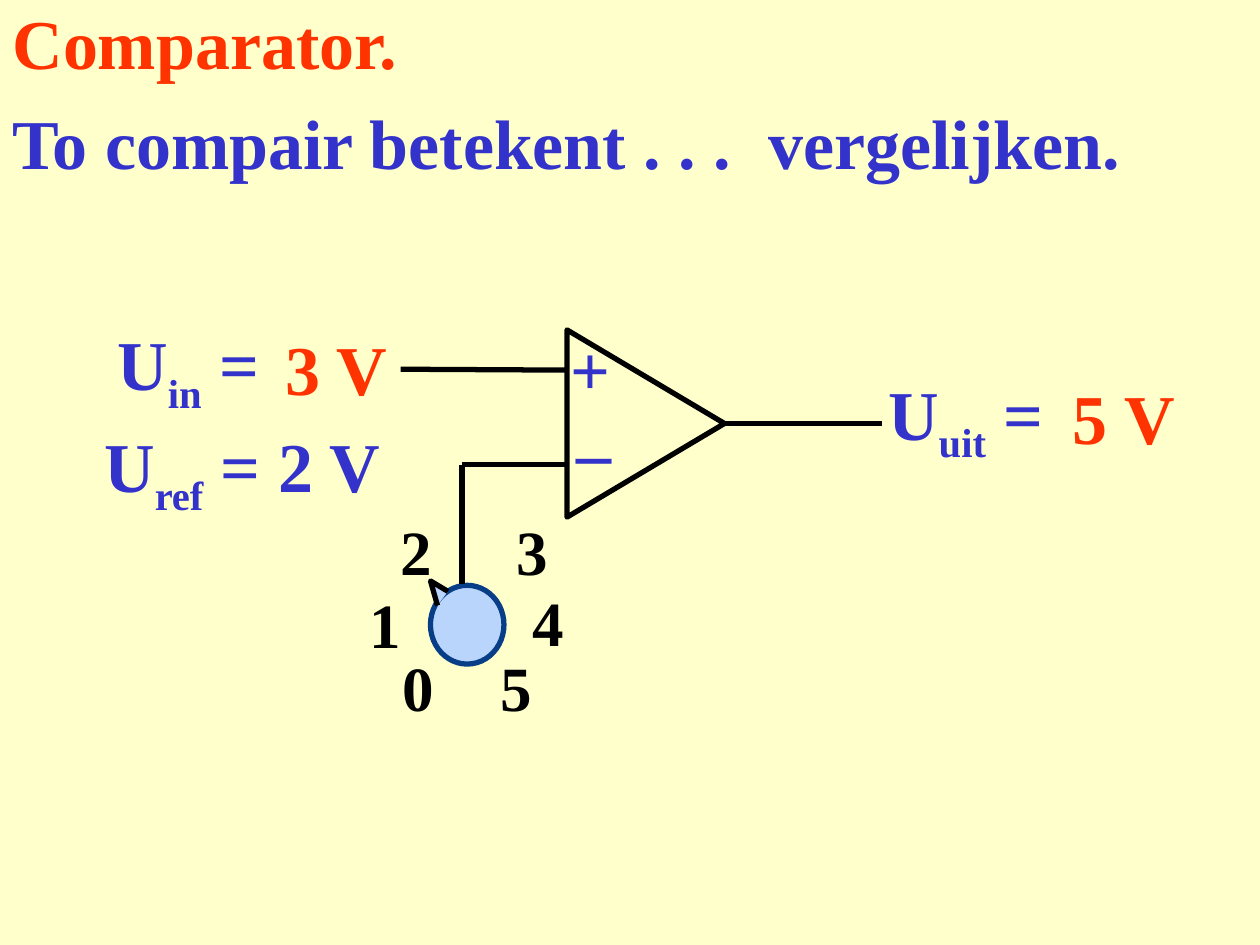
from lxml.etree import SubElement
from pptx import Presentation
from pptx.dml.color import RGBColor
from pptx.enum.shapes import MSO_CONNECTOR, MSO_SHAPE
from pptx.enum.text import MSO_ANCHOR, MSO_AUTO_SIZE, PP_ALIGN
from pptx.oxml.ns import qn
from pptx.util import Pt

BLUE, RED, BLACK = "3333CC", "FF3300", "000000"
KNOB_FILL, KNOB_LINE, PAPER = "B9D5FB", "073E87", "FFFFCC"
FONT = "Times New Roman"
LINE_WIDTH = 3

# Content: text parts (plain, subscript, plain), then left, top, width, height
TITLE = ("Comparator.", (0, 0, 450, 48))
LABELS = [
    (["To compair betekent . . ."], BLUE, (0, 54, 432, 54)),
    (["vergelijken."], BLUE, (432, 60, 252, 42)),
    (["U", "in", " ="], BLUE, (60, 183.5, 108, 54)),
    (["3 V"], RED, (156, 174, 114, 72)),
    (["U", "ref", " = 2 V"], BLUE, (52.5, 236, 192, 66)),
    (["U", "uit", " ="], BLUE, (500.5, 209, 114, 60)),
    (["5 V"], RED, (606, 202, 114, 72)),
    (["+"], BLUE, (319, 174, 36, 72)),
    (["_"], BLUE, (322.5, 207.5, 48, 72)),
]
# Knob scale: digit, left, top
DIGITS = [("0", 223, 367), ("1", 204, 331), ("2", 222, 289.5),
          ("3", 288, 289.5), ("4", 297.5, 330), ("5", 279, 367)]
DIGIT_WIDTH, DIGIT_HEIGHT = 30, 50
WIRES = [
    ((229, 211), (324, 211.5)),     # input
    ((324, 265.5), (264, 265.5)),   # reference
    ((264, 265.5), (264, 333.5)),   # reference to knob
    ((414, 242), (504, 242)),       # output
]
AMPLIFIER = (324, 188.5, 90, 107)   # as seen after rotation
KNOB = (246, 334.5, 42, 45)
POINTER = [(249.5, 345.5), (246, 331.5), (256.5, 338.5)]


def color(value):
    return RGBColor.from_string(value)


def points(values):
    return [Pt(value) for value in values]


def write(frame, parts, ink=BLUE, size=40, anchor=MSO_ANCHOR.MIDDLE, before=0):
    """Write one bold paragraph; every second part is a subscript."""
    frame.word_wrap = True
    frame.auto_size = MSO_AUTO_SIZE.NONE
    frame.vertical_anchor = anchor
    para = frame.paragraphs[0]
    para.alignment = PP_ALIGN.LEFT
    para.space_before = Pt(before)
    for index, part in enumerate(parts):
        span = para.add_run()
        span.text = part
        span.font.name, span.font.size, span.font.bold = FONT, Pt(size), True
        span.font.color.rgb = color(ink)
        if index % 2:
            span.font._element.set("baseline", "-25000")


def paint(shape, line, fill=None):
    shape.shadow.inherit = False
    shape.line.color.rgb, shape.line.width = color(line), Pt(LINE_WIDTH)
    if fill:
        shape.fill.solid()
        shape.fill.fore_color.rgb = color(fill)
    else:
        shape.fill.background()


def add_wire(page, start, end):
    wire = page.shapes.add_connector(
        MSO_CONNECTOR.STRAIGHT, *points(start + end))
    wire.line.color.rgb, wire.line.width = color(BLACK), Pt(LINE_WIDTH)
    SubElement(wire._element.spPr, qn("a:effectLst"))


def main():
    deck = Presentation()
    deck.slide_width, deck.slide_height = Pt(720), Pt(540)
    page = deck.slides.add_slide(deck.slide_layouts[5])
    page.background.fill.solid()
    page.background.fill.fore_color.rgb = color(PAPER)

    # Title
    title, area = page.shapes.title, TITLE[1]
    title.left, title.top, title.width, title.height = points(area)
    write(title.text_frame, [TITLE[0]], ink=RED)

    # Labels
    for parts, ink, area in LABELS:
        box = page.shapes.add_textbox(*points(area))
        write(box.text_frame, parts, ink=ink)

    # Knob with pointer and scale
    knob = page.shapes.add_shape(MSO_SHAPE.OVAL, *points(KNOB))
    paint(knob, KNOB_LINE, KNOB_FILL)
    builder = page.shapes.build_freeform(*POINTER[0], scale=Pt(1))
    builder.add_line_segments(POINTER[1:], close=False)
    paint(builder.convert_to_shape(), BLACK, KNOB_FILL)
    for digit, left, top in DIGITS:
        box = page.shapes.add_textbox(
            *points((left, top, DIGIT_WIDTH, DIGIT_HEIGHT)))
        write(box.text_frame, [digit], ink=BLACK, size=36,
              anchor=MSO_ANCHOR.TOP, before=4)

    # Amplifier: a triangle turned to point right, so width and height swap
    left, top, width, height = AMPLIFIER
    shift = (height - width) / 2
    amplifier = page.shapes.add_shape(
        MSO_SHAPE.ISOSCELES_TRIANGLE,
        *points((left - shift, top + shift, height, width)))
    amplifier.rotation = 90
    paint(amplifier, BLACK)

    # Wires
    for start, end in WIRES:
        add_wire(page, start, end)

    deck.save("out.pptx")


if __name__ == "__main__":
    main()
